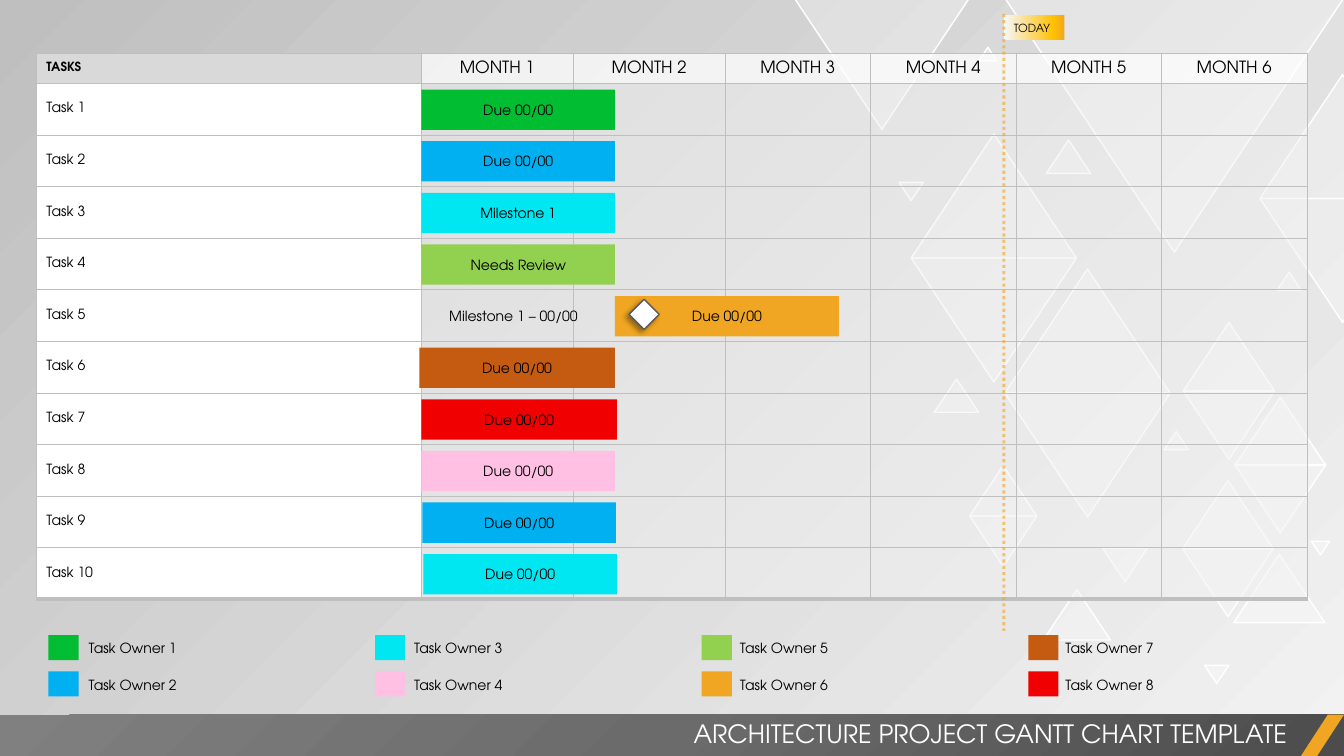
from lxml import etree
from pptx import Presentation
from pptx.dml.color import RGBColor
from pptx.enum.dml import MSO_LINE
from pptx.enum.shapes import MSO_CONNECTOR, MSO_SHAPE
from pptx.enum.text import MSO_ANCHOR, MSO_AUTO_SIZE, PP_ALIGN
from pptx.oxml import parse_xml
from pptx.oxml.ns import nsdecls, qn
from pptx.util import Pt

LEFT, CENTER, RIGHT = PP_ALIGN.LEFT, PP_ALIGN.CENTER, PP_ALIGN.RIGHT
TOP, MIDDLE = MSO_ANCHOR.TOP, MSO_ANCHOR.MIDDLE
RECTANGLE, DIAMOND = MSO_SHAPE.RECTANGLE, MSO_SHAPE.DIAMOND
TRIANGLE, PARALLELOGRAM = MSO_SHAPE.ISOSCELES_TRIANGLE, MSO_SHAPE.PARALLELOGRAM
FONT = "TeX Gyre Adventor"
BLACK, WHITE, GRID, ORANGE = "000000", "FFFFFF", "BFBFBF", "F0A622"
GREEN, BLUE, CYAN, PINK = "00BD32", "00B0F0", "00E7F2", "FFC0E3"
LIME, BROWN, RED = "92D050", "C55A11", "F10002"

TABLE_LEFT, TABLE_TOP, HEADER_HEIGHT, ROW_HEIGHT = 26, 38.3, 21.3, 36.87
COLUMN_WIDTHS = [275, 108.5, 108.5] + [103.9] * 4
BAR_TOP, BAR_HEIGHT = 64, 28.8
BARS = [
    (301, 138.2, GREEN, "Due 00/00"),
    (301, 138.2, BLUE, "Due 00/00"),
    (301, 138.2, CYAN, "Milestone 1"),
    (301, 138.2, LIME, "Needs Review"),
    (439.2, 160, ORANGE, "Due 00/00"),
    (299.5, 139.7, BROWN, "Due 00/00"),
    (301, 139.7, RED, "Due 00/00"),
    (301, 138.2, PINK, "Due 00/00"),
    (301.7, 138.2, BLUE, "Due 00/00"),
    (302.4, 138.2, CYAN, "Due 00/00"),
]
OWNER_COLORS = [GREEN, BLUE, CYAN, PINK, LIME, ORANGE, BROWN, RED]
TRIANGLES_UP = [
    (650.9, 95.8, 118), (717.8, 192.2, 118), (881.3, 396, 65), (844.6, 343.4, 65),
    (845.3, 230.4, 65), (882, 283.7, 65), (745.2, 421.2, 48), (692.6, 332.6, 48),
    (900, 53.3, 118), (667.4, 270.7, 31.7), (831.6, 308.2, 17.3),
    (912.2, 194.4, 17.3), (699.1, 33.8, 13), (747.4, 100.1, 31.7),
]
TRIANGLES_DOWN = [
    (650.9, 184.3, 118), (717.8, 280.8, 118), (717.8, -1.4, 242), (844.6, 391.7, 65),
    (845.3, 279.4, 65), (882, 331.9, 65), (692.6, 368.6, 48), (900, 141.8, 118),
    (787.7, 391.7, 31.7), (860.4, 475.2, 17.3), (642.2, 130.3, 17.3),
    (936.7, 386.6, 13), (567.4, -1.4, 125),
]


def color(value):
    return RGBColor.from_string(value)


def fade(holder, percent):
    tone = holder.find(qn("a:solidFill")).find(qn("a:srgbClr"))
    etree.SubElement(tone, qn("a:alpha")).set("val", str(percent * 1000))


def paint_gradient(holder, fill, stops, direction):
    fill.solid()
    marks = "".join(
        f'<a:gs pos="{place * 1000}"><a:srgbClr val="{tone}">'
        f'<a:alpha val="{alpha * 1000}"/></a:srgbClr></a:gs>'
        for place, tone, alpha in stops)
    gradient = parse_xml(f'<a:gradFill {nsdecls("a")} rotWithShape="1">'
                         f'<a:gsLst>{marks}</a:gsLst>{direction}</a:gradFill>')
    holder.replace(holder.find(qn("a:solidFill")), gradient)


def linear(degrees):
    return f'<a:lin ang="{degrees * 60000}" scaled="0"/>'


def write(frame, text, size, tone=BLACK, align=LEFT, bold=False):
    para = frame.paragraphs[0]
    para.alignment = align
    span = para.add_run()
    span.text = text
    for name, value in {"name": FONT, "size": Pt(size), "bold": bold}.items():
        setattr(span.font, name, value)
    span.font.color.rgb = color(tone)


def set_frame(frame, anchor):
    settings = {"word_wrap": True, "auto_size": MSO_AUTO_SIZE.NONE,
                "vertical_anchor": anchor}
    for name, value in settings.items():
        setattr(frame, name, value)


def add_block(page, kind, box, fill, line=None):
    shape = page.shapes.add_shape(kind, *map(Pt, box))
    shape.shadow.inherit = False
    shape.fill.solid()
    shape.fill.fore_color.rgb = color(fill)
    if line:
        shape.line.color.rgb = color(line)
        shape.line.width = Pt(1)
    else:
        shape.line.fill.background()
    set_frame(shape.text_frame, MIDDLE)
    return shape


def add_label(page, box, text, align=LEFT, anchor=TOP):
    label = page.shapes.add_textbox(*map(Pt, box))
    set_frame(label.text_frame, anchor)
    write(label.text_frame, text, 10, align=align)


def add_triangles(page, places, rotation):
    for left, top, width in places:
        triangle = add_block(page, TRIANGLE, (left, top, width, width * 0.75), WHITE, WHITE)
        triangle.rotation = rotation
        fade(triangle.element.spPr, 30)


def add_title_band(page):
    band = add_block(page, RECTANGLE, (0, 510.5, 960, 30.2), WHITE)
    corner = '<a:path path="circle"><a:fillToRect l="100000" t="100000"/></a:path>'
    paint_gradient(band.element.spPr, band.fill,
                   [(0, "4C4C4C", 100), (50, "6B6B6B", 100), (100, "808080", 100)], corner)
    accent = add_block(page, PARALLELOGRAM, (928.8, 510.5, 31.2, 30.2), ORANGE)
    accent.adjustments[0] = 0.65
    title = page.shapes.title
    place = {"left": 378, "top": 509.8, "width": 548.6, "height": 28.8}
    for name, value in place.items():
        setattr(title, name, Pt(value))
    set_frame(title.text_frame, TOP)
    write(title.text_frame, "ARCHITECTURE PROJECT GANTT CHART TEMPLATE", 18, WHITE, RIGHT)
    accent.element.addnext(title.element)


def format_cell(cell, fill, alpha, bottom):
    cell.vertical_anchor = MIDDLE
    cell.fill.solid()
    cell.fill.fore_color.rgb = color(fill)
    holder = cell.fill._xPr
    fade(holder, alpha)
    widths = {"lnL": 0.5, "lnR": 0.5, "lnT": 0.5, "lnB": bottom}
    for index, (side, width) in enumerate(widths.items()):
        holder.insert(index, parse_xml(
            f'<a:{side} {nsdecls("a")} w="{Pt(width)}"><a:solidFill>'
            f'<a:srgbClr val="{GRID}"/></a:solidFill></a:{side}>'))


def add_schedule(page):
    count = len(BARS)
    frame = page.shapes.add_table(
        count + 1, len(COLUMN_WIDTHS), Pt(TABLE_LEFT), Pt(TABLE_TOP),
        Pt(sum(COLUMN_WIDTHS)), Pt(HEADER_HEIGHT + count * ROW_HEIGHT))
    table = frame.table
    table.horz_banding = False
    for column, width in zip(table.columns, COLUMN_WIDTHS):
        column.width = Pt(width)
    for number, row in enumerate(table.rows):
        row.height = Pt(ROW_HEIGHT if number else HEADER_HEIGHT)
        for month, cell in enumerate(row.cells):
            if month:
                fill, alpha = ("F2F2F2", 50) if number else (WHITE, 75)
            else:
                fill, alpha = (WHITE if number else "D9D9D9"), 100
            format_cell(cell, fill, alpha, 3 if number == count else 0.5)
            if not number and month:
                write(cell.text_frame, f"MONTH {month}", 12, align=CENTER)
            elif not month:
                text, size = (f"Task {number}", 10) if number else ("TASKS", 9)
                write(cell.text_frame, text, size, bold=not number)


def add_bars(page):
    for index, (left, width, fill, text) in enumerate(BARS):
        box = (left, BAR_TOP + index * ROW_HEIGHT, width, BAR_HEIGHT)
        bar = add_block(page, RECTANGLE, box, fill)
        write(bar.text_frame, text, 10, align=CENTER)


def add_legend(page):
    for index, fill in enumerate(OWNER_COLORS):
        column, row = divmod(index, 2)
        top = 453.6 + row * 25.9
        add_block(page, RECTANGLE, (34.6 + column * 233.3, top, 21.6, 18), fill)
        add_label(page, (56.2 + column * 232.6, top, 172.8, 19.4), f"Task Owner {index + 1}")


def add_today_marker(page):
    flag = add_block(page, RECTANGLE, (717.1, 10.8, 43.2, 18), ORANGE)
    paint_gradient(flag.element.spPr, flag.fill,
                   [(0, "F6F8FC", 100), (83, "FFC000", 100), (100, ORANGE, 100)], linear(0))
    write(flag.text_frame, "TODAY", 8)
    marker = page.shapes.add_connector(
        MSO_CONNECTOR.STRAIGHT, Pt(717.1), Pt(10), Pt(717.1), Pt(450.7))
    marker.line.color.rgb = color(ORANGE)
    marker.line.width = Pt(2.25)
    marker.line.dash_style = MSO_LINE.ROUND_DOT
    holder = marker.element.spPr
    fade(holder.find(qn("a:ln")), 60)
    etree.SubElement(holder, qn("a:effectLst"))


def add_milestone(page):
    diamond = add_block(page, DIAMOND, (449.3, 213.8, 21.6, 21.6), WHITE, "595959")
    diamond.element.spPr.find(qn("a:effectLst")).append(parse_xml(
        f'<a:outerShdw {nsdecls("a")} blurRad="{Pt(4)}" dist="{Pt(3)}" dir="8100000">'
        f'<a:srgbClr val="{BLACK}"><a:alpha val="40000"/></a:srgbClr></a:outerShdw>'))
    add_label(page, (303.1, 211, 116.6, 28.8), "Milestone 1 – 00/00", RIGHT, MIDDLE)


def main():
    deck = Presentation()
    deck.slide_width, deck.slide_height = Pt(960), Pt(540)
    page = deck.slides.add_slide(deck.slide_layouts[5])
    backdrop = page.background.fill
    backdrop.solid()
    paint_gradient(next(page.element.iter(qn("p:bgPr"))), backdrop,
                   [(0, "F2F2F2", 40), (100, GRID, 100)], linear(225))
    add_triangles(page, TRIANGLES_UP, 0)
    add_triangles(page, TRIANGLES_DOWN, 180)
    add_title_band(page)
    add_schedule(page)
    add_bars(page)
    add_legend(page)
    add_today_marker(page)
    add_milestone(page)
    deck.save("out.pptx")


if __name__ == "__main__":
    main()
